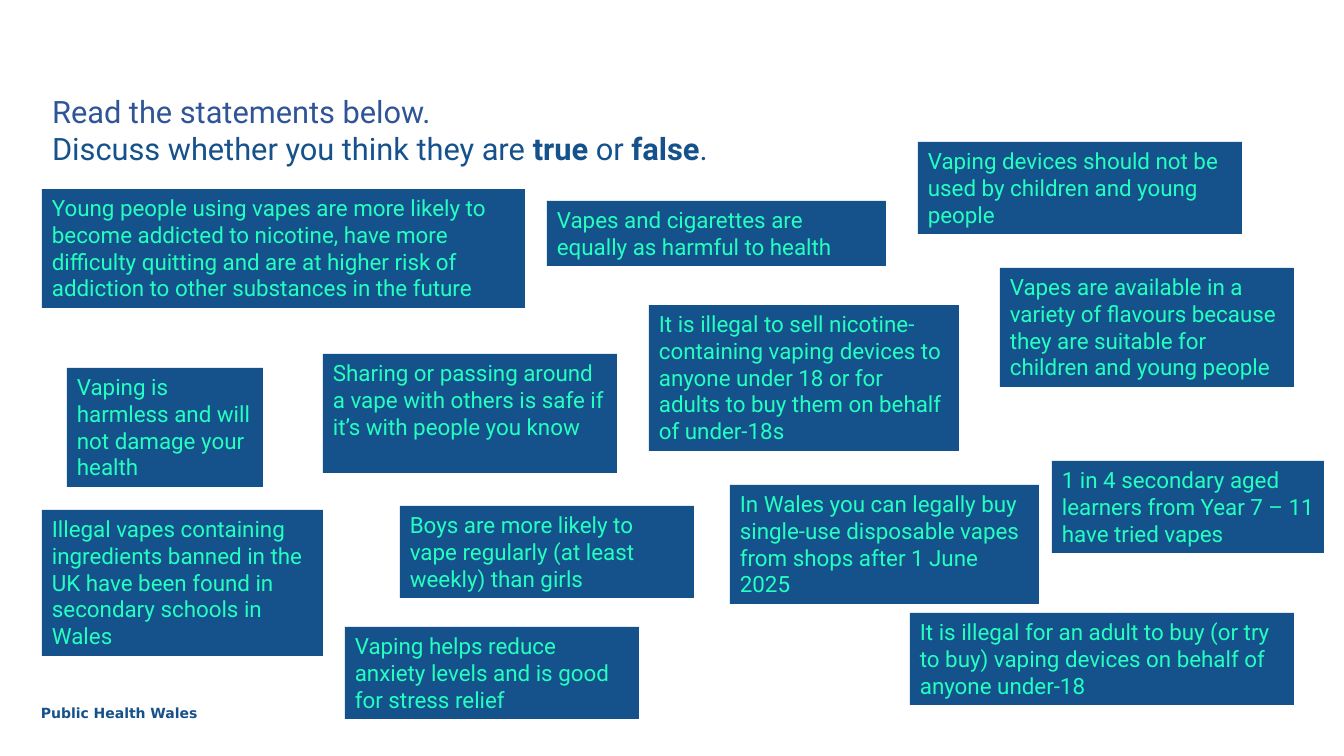
from pptx import Presentation
from pptx import util as u
from pptx.dml.color import RGBColor
from pptx.enum import shapes, text

COLOURS = {"navy": "15518B", "blue": "2F5597", "mint": "24FFC0"}
EMU_PER_PX = 914400 / 100.8

STATEMENTS = [
    (918, 142, 324, 92, "Vaping devices should not be used by children and young people"),
    (649, 305, 310, 146, "It is illegal to sell nicotine-containing vaping devices to anyone "
                         "under 18 or for adults to buy them on behalf of under-18s"),
    (910, 613, 384, 92, "It is illegal for an adult to buy (or try to buy) vaping devices "
                        "on behalf of anyone under-18"),
    (42, 189, 483, 119, "Young people using vapes are more likely to become addicted to nicotine, "
                        "have more difficulty quitting and are at higher risk of addiction "
                        "to other substances in the future"),
    (42, 510, 281, 146, "Illegal vapes containing ingredients banned in the UK have been found "
                        "in secondary schools in Wales"),
    (1052, 461, 272, 92, "1 in 4 secondary aged learners from Year 7 – 11 have tried vapes"),
    (67, 368, 196, 119, "Vaping is harmless and will not damage your health"),
    (1000, 268, 294, 119, "Vapes are available in a variety of flavours because they are suitable "
                          "for children and young people"),
    (345, 627, 294, 92, "Vaping helps reduce anxiety levels and is good for stress relief"),
    (547, 201, 339, 65, "Vapes and cigarettes are equally as harmful to health"),
    (400, 506, 294, 92, "Boys are more likely to vape regularly (at least weekly) than girls"),
    (323, 354, 294, 119, "Sharing or passing around a vape with others is safe if it’s "
                         "with people you know"),
    (730, 485, 309, 119, "In Wales you can legally buy single‑use disposable vapes from shops "
                         "after 1 June 2025"),
]


def px(length):
    return u.Emu(round(length * EMU_PER_PX))


class Quiz:
    """Holds the style and the slide of a true-or-false quiz."""

    def __init__(self, deck):
        self.slide = deck.slides.add_slide(deck.slide_layouts[5])
        self.font = "Roboto"

    def colour(self, name):
        return RGBColor.from_string(COLOURS[name])

    def run(self, paragraph, words, size, colour, bold=False, font=None):
        run = paragraph.add_run()
        run.text = words
        run.font.name = font or self.font
        run.font.size = u.Pt(size)
        run.font.bold = bold
        run.font.color.rgb = self.colour(colour)

    def title(self, left, top, width, height, lines):
        heading = self.slide.shapes.title
        heading.left, heading.top = px(left), px(top)
        heading.width, heading.height = px(width), px(height)
        frame = heading.text_frame
        frame.word_wrap = True
        frame.auto_size = text.MSO_AUTO_SIZE.NONE
        frame.vertical_anchor = text.MSO_ANCHOR.BOTTOM
        for number, (colour, parts) in enumerate(lines):
            line = frame.add_paragraph() if number else frame.paragraphs[0]
            line.alignment = text.PP_ALIGN.LEFT
            line.space_before = u.Pt(0)
            for words, bold in parts:
                self.run(line, words, 22, colour, bold)

    def card(self, left, top, width, height, statement):
        card = self.slide.shapes.add_shape(
            shapes.MSO_SHAPE.RECTANGLE, px(left), px(top), px(width), px(height))
        card.shadow.inherit = False
        card.fill.solid()
        card.fill.fore_color.rgb = self.colour("navy")
        card.line.fill.background()
        frame = card.text_frame
        frame.word_wrap = True
        frame.auto_size = text.MSO_AUTO_SIZE.SHAPE_TO_FIT_TEXT
        frame.vertical_anchor = text.MSO_ANCHOR.TOP
        frame.paragraphs[0].alignment = text.PP_ALIGN.LEFT
        self.run(frame.paragraphs[0], statement, 16, "mint")

    def footer(self, left, top, width, height, words):
        footer = self.slide.shapes.add_textbox(px(left), px(top), px(width), px(height))
        footer.text_frame.word_wrap = True
        footer.text_frame.auto_size = text.MSO_AUTO_SIZE.SHAPE_TO_FIT_TEXT
        self.run(footer.text_frame.paragraphs[0], words, 10, "navy", True, "DejaVu Sans")


def main():
    deck = Presentation()
    deck.slide_width, deck.slide_height = px(1344), px(756)
    quiz = Quiz(deck)
    quiz.footer(31, 700, 182, 27, "Public Health Wales")
    quiz.title(42, 128, 1076, 44, [
        ("blue", [("Read the statements below.", False)]),
        ("navy", [("Discuss whether you think they are ", False), ("true", True),
                  (" or ", False), ("false", True), (".", False)]),
    ])
    for statement in STATEMENTS:
        quiz.card(*statement)
    deck.save("out.pptx")


if __name__ == "__main__":
    main()
